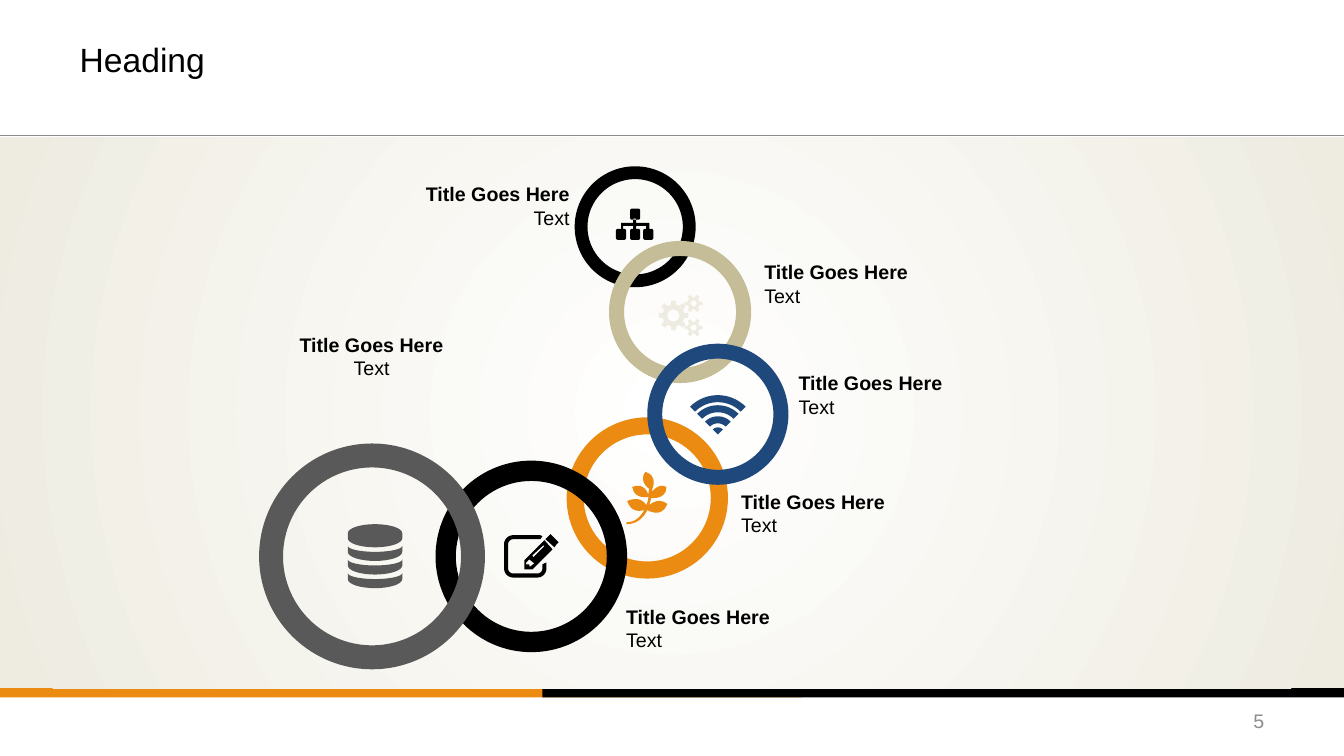
from math import cos, radians, sin
from typing import NamedTuple

from lxml.etree import SubElement
from pptx import Presentation
from pptx.dml.color import RGBColor
from pptx.enum.shapes import MSO_CONNECTOR, MSO_SHAPE
from pptx.enum.text import MSO_ANCHOR, PP_ALIGN
from pptx.oxml import parse_xml
from pptx.oxml.ns import nsdecls, qn
from pptx.util import Inches, Pt

Point = tuple[float, float]
Contour = list[Point]

BLACK, GREY, NAVY = "000000", "595959", "1F497D"
ORANGE, TAN, CREAM, PALE_GREY = "EB8B11", "C4BD97", "EEECE1", "8C8C8C"


class Ring(NamedTuple):
    left: float
    top: float
    size: float
    colour: str


class Label(NamedTuple):
    left: float
    top: float
    width: float
    align: PP_ALIGN


class Icon(NamedTuple):
    colour: str
    contours: list[Contour]


RINGS = [
    Ring(5.7, 1.65, 1.2, BLACK),
    Ring(6.04, 2.39, 1.41, TAN),
    Ring(5.62, 4.14, 1.6, ORANGE),
    Ring(4.32, 4.57, 1.9, BLACK),
    Ring(2.57, 4.4, 2.24, GREY),
    Ring(6.42, 3.41, 1.4, NAVY),
]
LABELS = [
    Label(2.33, 3.3, 2.71, PP_ALIGN.CENTER),
    Label(6.21, 6, 3.08, PP_ALIGN.LEFT),
    Label(7.35, 4.86, 3.08, PP_ALIGN.LEFT),
    Label(7.92, 3.68, 3.08, PP_ALIGN.LEFT),
    Label(7.58, 2.58, 3.08, PP_ALIGN.LEFT),
    Label(2.57, 1.81, 3.08, PP_ALIGN.RIGHT),
]


def rgb(colour: str) -> RGBColor:
    return RGBColor.from_string(colour)


def arc(x: float, y: float, rx: float, ry: float, start: float, end: float) -> Contour:
    """Points along an elliptical arc; angles run clockwise from the right."""
    steps = 16
    angles = [radians(start + (end - start) * i / steps) for i in range(steps + 1)]
    return [(x + rx * cos(a), y + ry * sin(a)) for a in angles]


def curve(start: Point, segments: list[tuple[Point, Point, Point]]) -> Contour:
    """Points along a chain of cubic curves."""
    points = [start]
    for c1, c2, end in segments:
        origin = points[-1]
        for t in (i / 8 for i in range(1, 9)):
            weights = ((1 - t) ** 3, 3 * t * (1 - t) ** 2, 3 * t * t * (1 - t), t ** 3)
            corners = (origin, c1, c2, end)
            points.append((sum(w * p[0] for w, p in zip(weights, corners)),
                           sum(w * p[1] for w, p in zip(weights, corners))))
    return points


def gear(x: float, y: float, radius: float, root: float, hole: float, teeth: int) -> list[Contour]:
    pitch = 360 / teeth
    profile = ((-0.3, root), (-0.18, radius), (0.18, radius), (0.3, root))
    rim = [(x + r * cos(radians(pitch * (tooth + turn))),
            y + r * sin(radians(pitch * (tooth + turn))))
           for tooth in range(teeth) for turn, r in profile]
    return [rim, arc(x, y, hole, hole, 0, 360)]


def rounded_box(left: float, top: float, width: float, height: float, r: float) -> Contour:
    right, bottom = left + width, top + height
    return (arc(left + r, top + r, r, r, 180, 270) + arc(right - r, top + r, r, r, 270, 360)
            + arc(right - r, bottom - r, r, r, 0, 90) + arc(left + r, bottom - r, r, r, 90, 180))


def database() -> list[Contour]:
    x, half = 3.72, 0.27
    lid = arc(x, 5.29, half, 0.09, 180, 360) + arc(x, 5.34, half, 0.09, 0, 180)
    tops = [5.28 + 0.135 * level for level in (1, 2, 3)]
    return [lid] + [arc(x, y, half, 0.06, 180, 0) + arc(x, y + 0.06, half, 0.09, 0, 180)
                    for y in tops]


def notepad() -> list[Contour]:
    left, right, top, bottom = 5.09, 5.33, 5.4, 5.64
    outer, inner = 0.09, 0.05
    page = (arc(left, top, outer, outer, 270, 180) + arc(left, bottom, outer, outer, 180, 90)
            + arc(right, bottom, outer, outer, 90, 0) + [(5.42, 5.58), (5.38, 5.6)]
            + arc(right, bottom, inner, inner, 0, 90) + arc(left, bottom, inner, inner, 90, 180)
            + arc(left, top, inner, inner, 180, 270) + [(5.36, 5.35), (5.38, 5.32), (5.36, 5.31)])
    pencil = [(5.48, 5.45), (5.28, 5.65), (5.2, 5.65), (5.2, 5.56), (5.4, 5.36)]
    tip = [(5.3, 5.59), (5.25, 5.55), (5.22, 5.58), (5.22, 5.6), (5.25, 5.6),
           (5.25, 5.62), (5.26, 5.62)]
    slit = [(5.39, 5.41), (5.28, 5.51), (5.29, 5.53), (5.4, 5.42)]
    eraser = [(5.5, 5.43), (5.41, 5.35), (5.44, 5.32), (5.46, 5.3), (5.48, 5.32),
              (5.52, 5.36), (5.54, 5.38), (5.52, 5.4)]
    return [page, pencil, tip, slit, eraser]


def branch() -> list[Contour]:
    return [curve((6.42, 5.06), [
        ((6.38, 5.15), (6.3, 5.2), (6.22, 5.2)), ((6.21, 5.2), (6.21, 5.18), (6.22, 5.18)),
        ((6.3, 5.18), (6.35, 5.13), (6.39, 5.06)), ((6.35, 5.07), (6.26, 5.09), (6.22, 4.97)),
        ((6.34, 4.92), (6.39, 4.98), (6.41, 5.01)), ((6.42, 4.99), (6.43, 4.96), (6.43, 4.93)),
        ((6.43, 4.93), (6.29, 4.96), (6.27, 4.83)), ((6.4, 4.78), (6.43, 4.91), (6.43, 4.91)),
        ((6.43, 4.89), (6.44, 4.85), (6.44, 4.85)), ((6.44, 4.85), (6.33, 4.78), (6.4, 4.68)),
        ((6.53, 4.72), (6.47, 4.85), (6.47, 4.85)), ((6.47, 4.85), (6.47, 4.87), (6.47, 4.88)),
        ((6.47, 4.88), (6.52, 4.79), (6.61, 4.83)), ((6.61, 4.96), (6.46, 4.94), (6.46, 4.94)),
        ((6.45, 4.96), (6.45, 5), (6.43, 5.02)), ((6.43, 5.02), (6.52, 4.92), (6.62, 5)),
        ((6.56, 5.15), (6.42, 5.06), (6.42, 5.06))])]


def wireless() -> list[Contour]:
    x, y = 7.12, 4.31
    bands = ((0.32, 0.39), (0.22, 0.29), (0.11, 0.18), (0, 0.07))
    return [arc(x, y, far, far, 225, 315) + arc(x, y, near, near, 315, 225)
            for near, far in bands]


def hierarchy() -> list[Contour]:
    boxes = [(6.25, 2.07), (6.11, 2.27), (6.25, 2.27), (6.38, 2.27)]
    links = [(6.28, 2.17), (6.31, 2.17), (6.31, 2.21), (6.44, 2.21), (6.44, 2.27), (6.41, 2.27),
             (6.41, 2.24), (6.31, 2.24), (6.31, 2.27), (6.28, 2.27), (6.28, 2.24), (6.18, 2.24),
             (6.18, 2.27), (6.16, 2.27), (6.16, 2.21), (6.28, 2.21)]
    return [rounded_box(left, top, 0.1, 0.11, 0.02) for left, top in boxes] + [links]


def paint(shape, colour: str) -> None:
    shape.shadow.inherit = False
    shape.line.fill.background()
    shape.fill.solid()
    shape.fill.fore_color.rgb = rgb(colour)


def add_preset(slide, kind: MSO_SHAPE, left: float, top: float, width: float, height: float,
               colour: str):
    shape = slide.shapes.add_shape(kind, Inches(left), Inches(top), Inches(width), Inches(height))
    paint(shape, colour)
    return shape


def add_icon(slide, icon: Icon) -> None:
    outlines = [[(Inches(x), Inches(y)) for x, y in contour] for contour in icon.contours]
    builder = slide.shapes.build_freeform(*outlines[0][0], scale=1.0)
    for index, outline in enumerate(outlines):
        if index:
            builder.move_to(*outline[0])
        builder.add_line_segments(outline[1:], close=True)
    paint(builder.convert_to_shape(), icon.colour)


def add_run(paragraph, text: str, size: int, colour: str, bold: bool = False) -> None:
    run = paragraph.add_run()
    run.text = text
    run.font.name, run.font.size, run.font.bold = "Arial", Pt(size), bold
    run.font.color.rgb = rgb(colour)


def set_frame(frame, side: float, edge: float, anchor: MSO_ANCHOR) -> None:
    frame.word_wrap = True
    frame.vertical_anchor = anchor
    frame.margin_left = frame.margin_right = Inches(side)
    frame.margin_top = frame.margin_bottom = Inches(edge)


def add_label(slide, label: Label) -> None:
    frame = slide.shapes.add_textbox(Inches(label.left), Inches(label.top),
                                     Inches(label.width), Inches(0.44)).text_frame
    set_frame(frame, 0, 0, MSO_ANCHOR.TOP)
    heading, body = frame.paragraphs[0], frame.add_paragraph()
    heading.alignment = body.alignment = label.align
    add_run(heading, "Title Goes Here", 14, BLACK, bold=True)
    add_run(body, "Text", 14, BLACK)


def add_backdrop(slide) -> None:
    for left, colour in ((0, ORANGE), (5.38, BLACK)):
        add_preset(slide, MSO_SHAPE.RECTANGLE, left, 6.82, 7.95, 0.1, colour)
    divider = slide.shapes.add_connector(MSO_CONNECTOR.STRAIGHT, 0, Inches(1.34),
                                         Inches(13.33), Inches(1.34))
    divider.line.color.rgb, divider.line.width = rgb(PALE_GREY), Pt(0.75)
    properties = divider.element.find(qn("p:spPr"))
    SubElement(properties, qn("a:effectLst"))
    panel = add_preset(slide, MSO_SHAPE.RECTANGLE, 0, 1.36, 13.33, 5.47, CREAM)
    solid = panel.element.spPr.find(qn("a:solidFill"))
    glow = parse_xml(
        f'<a:gradFill {nsdecls("a")} rotWithShape="1"><a:gsLst>'
        f'<a:gs pos="0"><a:srgbClr val="FFFFFF"/></a:gs>'
        f'<a:gs pos="100000"><a:srgbClr val="{CREAM}"/></a:gs></a:gsLst>'
        '<a:path path="circle"><a:fillToRect l="50000" t="50000" r="50000" b="50000"/></a:path>'
        '</a:gradFill>')
    solid.getparent().replace(solid, glow)


def main() -> None:
    deck = Presentation()
    deck.slide_width, deck.slide_height = Inches(13.33), Inches(7.5)
    slide = deck.slides.add_slide(deck.slide_layouts[5])
    title = slide.shapes.title
    title.left, title.top, title.width, title.height = map(Inches, (0.67, 0.13, 12, 0.91))
    set_frame(title.text_frame, 0.12, 0.06, MSO_ANCHOR.MIDDLE)
    title.text_frame.paragraphs[0].alignment = PP_ALIGN.LEFT
    add_run(title.text_frame.paragraphs[0], "Heading", 24, BLACK)

    add_backdrop(slide)
    for ring in RINGS:
        donut = add_preset(slide, MSO_SHAPE.DONUT, ring.left, ring.top, ring.size, ring.size,
                           ring.colour)
        donut.adjustments[0] = 0.106
    gears = (gear(6.68, 3.13, 0.15, 0.11, 0.06, 8) + gear(6.88, 3.01, 0.09, 0.06, 0.03, 6)
             + gear(6.88, 3.25, 0.09, 0.06, 0.03, 6))
    for icon in (Icon(GREY, database()), Icon(BLACK, notepad()), Icon(ORANGE, branch()),
                 Icon(NAVY, wireless()), Icon(CREAM, gears), Icon(BLACK, hierarchy())):
        add_icon(slide, icon)
    for label in LABELS:
        add_label(slide, label)

    page_number = slide.shapes.add_textbox(Inches(9.55), Inches(6.95), Inches(3.11),
                                           Inches(0.4)).text_frame
    set_frame(page_number, 0.12, 0.06, MSO_ANCHOR.MIDDLE)
    page_number.paragraphs[0].alignment = PP_ALIGN.RIGHT
    add_run(page_number.paragraphs[0], "5", 14, PALE_GREY)
    deck.save("out.pptx")


if __name__ == "__main__":
    main()
